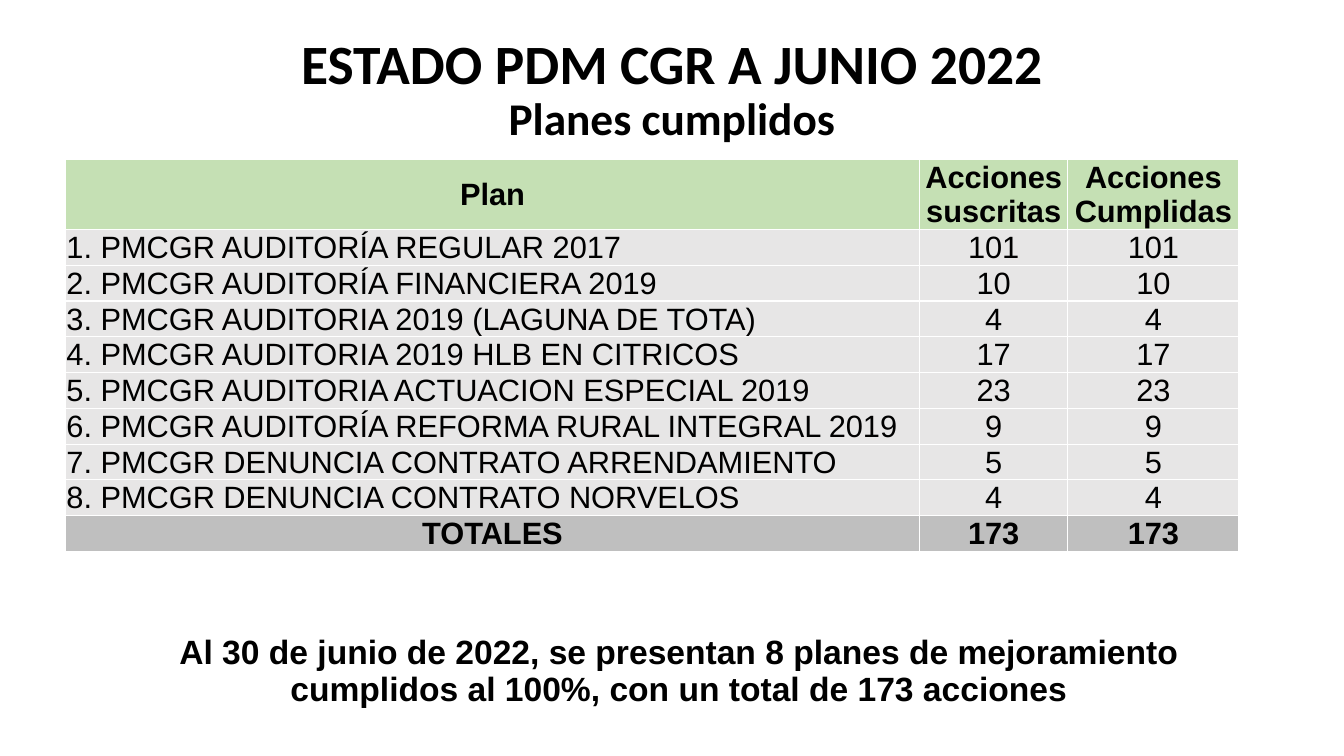
from pptx import Presentation
from pptx.dml.color import RGBColor
from pptx.enum.text import MSO_ANCHOR as Anchor, MSO_AUTO_SIZE as AutoSize, PP_ALIGN as Align
from pptx.oxml import parse_xml
from pptx.oxml.ns import nsdecls
from pptx.util import Pt

BLACK = RGBColor(0x00, 0x00, 0x00)
WHITE = RGBColor(0xFF, 0xFF, 0xFF)
GREEN = RGBColor(0xC5, 0xE0, 0xB4)
LIGHT_GRAY = RGBColor(0xE7, 0xE6, 0xE6)
MID_GRAY = RGBColor(0xBF, 0xBF, 0xBF)

HEADINGS = ("Plan", "Acciones suscritas", "Acciones Cumplidas")
PLANS = [
    ("PMCGR AUDITORÍA REGULAR 2017", 101, 101),
    ("PMCGR AUDITORÍA FINANCIERA 2019", 10, 10),
    ("PMCGR AUDITORIA 2019 (LAGUNA DE TOTA)", 4, 4),
    ("PMCGR AUDITORIA 2019 HLB EN CITRICOS", 17, 17),
    ("PMCGR AUDITORIA ACTUACION ESPECIAL 2019", 23, 23),
    ("PMCGR AUDITORÍA REFORMA RURAL INTEGRAL 2019", 9, 9),
    ("PMCGR DENUNCIA CONTRATO ARRENDAMIENTO", 5, 5),
    ("PMCGR DENUNCIA CONTRATO NORVELOS", 4, 4),
]
TOTALS = ("TOTALES", sum(plan[1] for plan in PLANS), sum(plan[2] for plan in PLANS))
COLUMN_WIDTHS = (610, 106, 122.2)
HEADER_HEIGHT, ROW_HEIGHT = 50, 25.55


def style_run(run, name, size, bold=True):
    run.font.name = name
    run.font.size = Pt(size)
    run.font.bold = bold
    run.font.color.rgb = BLACK


def place(shape, left, top, width, height):
    shape.left, shape.top = Pt(left), Pt(top)
    shape.width, shape.height = Pt(width), Pt(height)


def format_centred(frame):
    frame.word_wrap = True
    frame.auto_size = AutoSize.NONE
    frame.vertical_anchor = Anchor.MIDDLE
    para = frame.paragraphs[0]
    para.alignment = Align.CENTER
    para.line_spacing = 0.9
    return para


def add_title(page, left, top, width, height):
    title = page.shapes.title
    place(title, left, top, width, height)
    para = format_centred(title.text_frame)
    heading = para.add_run()
    heading.text = "ESTADO PDM CGR A JUNIO 2022"
    style_run(heading, "Calibri", 39.6)
    para.add_line_break()
    subheading = para.add_run()
    subheading.text = "Planes cumplidos"
    style_run(subheading, "Calibri", 32.4)


def add_borders(cell):
    properties = cell._tc.get_or_add_tcPr()
    for side in ("lnL", "lnR", "lnT", "lnB"):
        properties.append(parse_xml(
            f'<a:{side} {nsdecls("a")} w="{Pt(1)}"><a:solidFill>'
            f'<a:srgbClr val="{WHITE}"/></a:solidFill></a:{side}>'))


def fill_cell(cell, text, fill, bold, alignment):
    add_borders(cell)
    cell.fill.solid()
    cell.fill.fore_color.rgb = fill
    cell.vertical_anchor = Anchor.MIDDLE
    cell.margin_left = cell.margin_right = cell.margin_top = Pt(0.7)
    cell.margin_bottom = Pt(0)
    para = cell.text_frame.paragraphs[0]
    para.text = str(text)
    para.alignment = alignment
    style_run(para.runs[0], "Arial", 22, bold)


def add_plan_table(page, left, top):
    numbered = [(f"{number}. {name}", signed, done)
                for number, (name, signed, done) in enumerate(PLANS, 1)]
    rows = [(HEADINGS, GREEN, True),
            *((plan, LIGHT_GRAY, False) for plan in numbered),
            (TOTALS, MID_GRAY, True)]
    height = HEADER_HEIGHT + ROW_HEIGHT * (len(rows) - 1)
    table = page.shapes.add_table(
        len(rows), len(COLUMN_WIDTHS), Pt(left), Pt(top),
        Pt(sum(COLUMN_WIDTHS)), Pt(height)).table
    for column, width in zip(table.columns, COLUMN_WIDTHS):
        column.width = Pt(width)
    for index, (values, fill, bold) in enumerate(rows):
        table.rows[index].height = Pt(ROW_HEIGHT if index else HEADER_HEIGHT)
        for position, value in enumerate(values):
            centred = bold or position > 0
            fill_cell(table.cell(index, position), value, fill, bold,
                      Align.CENTER if centred else Align.LEFT)


def add_summary(page, left, top, width, height):
    box = page.shapes.add_textbox(Pt(left), Pt(top), Pt(width), Pt(height))
    para = format_centred(box.text_frame)
    para.text = ("Al 30 de junio de 2022, se presentan 8 planes de mejoramiento "
                 "cumplidos al 100%, con un total de 173 acciones")
    style_run(para.runs[0], "Arial", 24)


def main():
    deck = Presentation()
    deck.slide_width, deck.slide_height = Pt(960), Pt(540)
    page = deck.slides.add_slide(deck.slide_layouts[5])
    add_title(page, 66, 29, 828, 72)
    add_summary(page, 93.6, 449, 782.6, 62)
    add_plan_table(page, 46.8, 114)
    deck.save("out.pptx")


if __name__ == "__main__":
    main()
